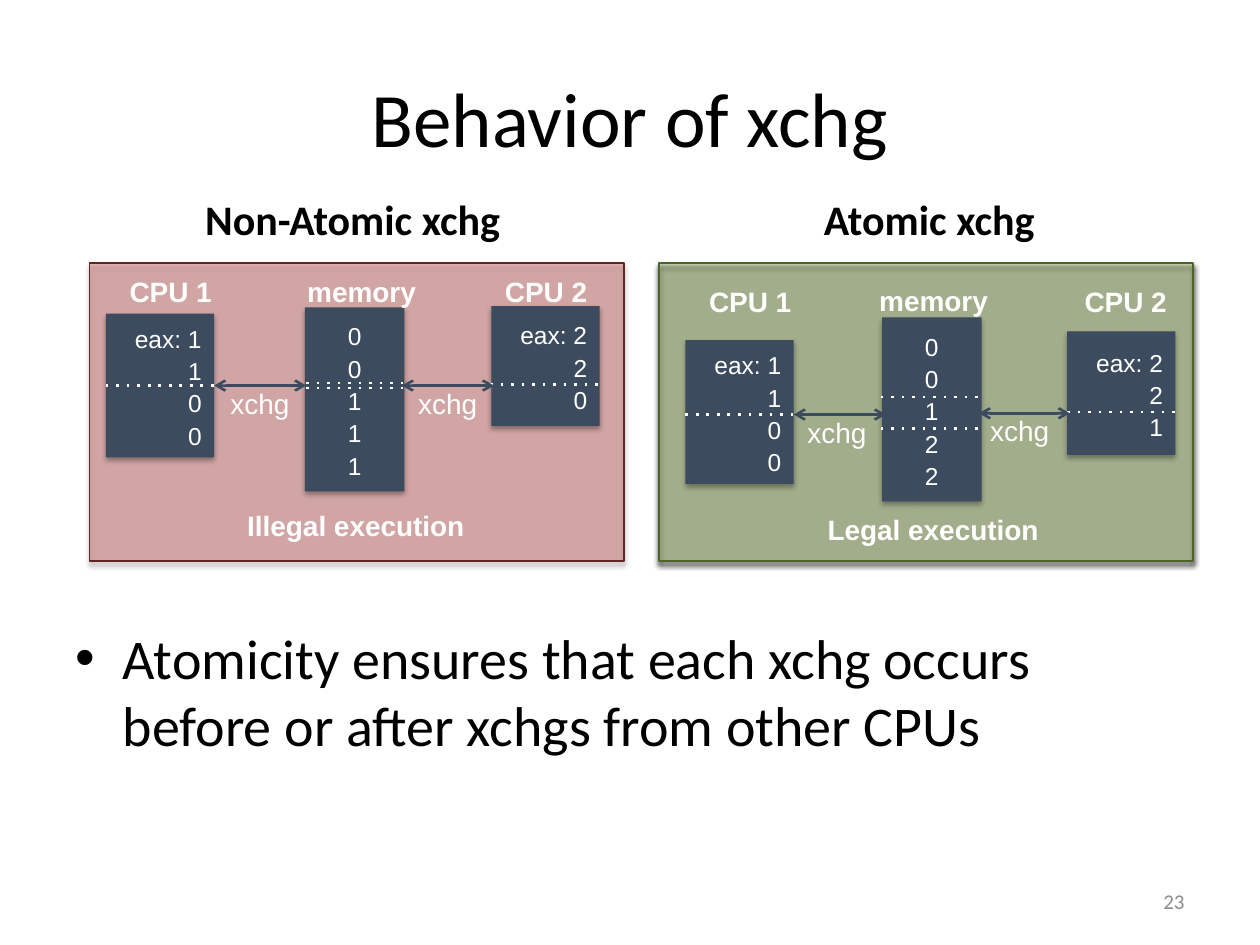
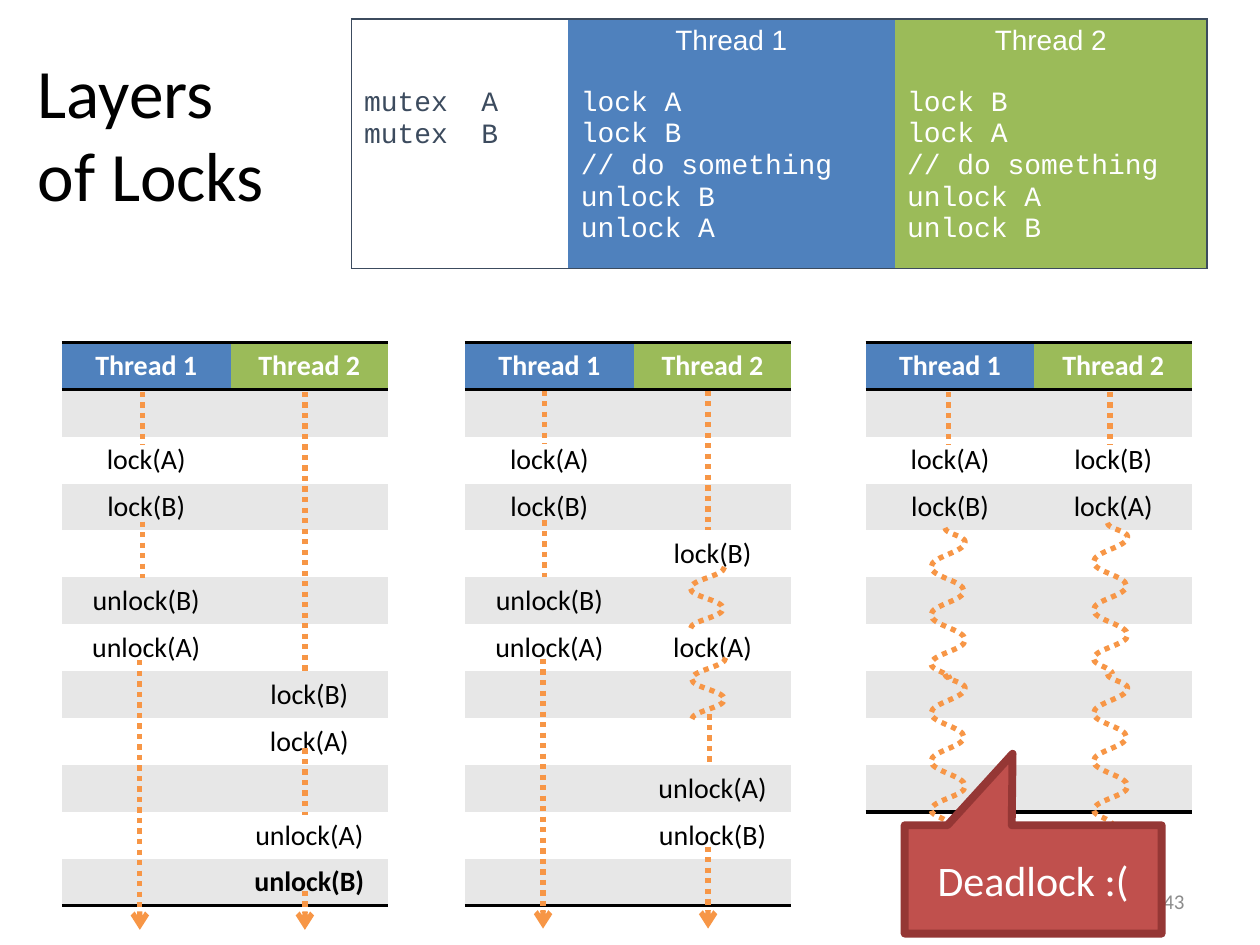
from copy import deepcopy
from dataclasses import dataclass
from typing import Any, NamedTuple

from lxml import etree
from pptx import Presentation
from pptx.dml.color import RGBColor
from pptx.enum.shapes import MSO_CONNECTOR, MSO_SHAPE
from pptx.enum.text import MSO_ANCHOR, MSO_AUTO_SIZE, PP_ALIGN
from pptx.oxml.ns import qn
from pptx.util import Inches, Pt

LEFT, CENTER, RIGHT = PP_ALIGN.LEFT, PP_ALIGN.CENTER, PP_ALIGN.RIGHT
MIDDLE, TOP = MSO_ANCHOR.MIDDLE, MSO_ANCHOR.TOP
NO_STYLE_NO_GRID = "{2D5ABB26-0587-4C30-8999-92F81FD0307C}"


@dataclass(frozen=True)
class Theme:
    black: str = "000000"
    white: str = "FFFFFF"
    slate: str = "3C4B5E"
    band: str = "E7E7E7"
    number: str = "8C8C8C"
    red: str = "C0504D"
    red_edge: str = "953735"
    maroon: str = "632523"
    green: str = "9BBB59"
    green_edge: str = "4F6228"
    blue: str = "4F81BD"
    orange: str = "F79646"
    text_font: str = "Calibri"
    diagram_font: str = "Arial"
    code_font: str = "Courier New"
    title: float = 44
    side_title: float = 39.6
    body: float = 32
    heading: float = 24
    label: float = 16
    value: float = 14
    footer: float = 12


THEME = Theme()


class Label(NamedTuple):
    text: str
    left: float
    top: float
    width: float
    bold: bool = True
    wrap: bool = False
    align: Any = LEFT


class Store(NamedTuple):
    """A CPU register box or the memory box, one value a line."""
    values: str
    left: float
    top: float
    width: float
    height: float
    align: Any = RIGHT


class Stroke(NamedTuple):
    x: float
    y: float
    end_x: float
    end_y: float
    arrow: bool = False


class Panel(NamedTuple):
    left: float
    fill: str
    opacity: int
    edge: str
    shadow: int
    heading: Label
    stores: list[Store]
    labels: list[Label]
    dots: list[Stroke]
    exchanges: list[Stroke]


class Schedule(NamedTuple):
    left: float
    rows: int
    steps: tuple[dict[int, str], dict[int, str]]  # row -> call, for each thread
    runs: list[tuple]    # x from the table's left, top, bottom, arrow
    waits: list[tuple]   # left, top, swing points


SHORT_WAIT = [(.27, 0), (0, .17), (.26, .33), (0, .49)]
LONG_WAIT = [(.11, 0), (.27, .11), (0, .31), (.26, .5), (0, .69), (.27, .89), (0, 1.08), (.15, 1.2)]

PANELS = [
    Panel(.71, THEME.red, 39, THEME.maroon, 35, Label("Non-Atomic xchg", 1.53, 1.49, 2.57),
          [Store("eax: 1\n1\n0\n0", .84, 2.49, .86, 1.14),
           Store("eax: 2\n2\n0", 3.9, 2.43, .86, .95),
           Store("0\n0\n1\n1\n1", 2.42, 2.44, .79, 1.46, CENTER)],
          [Label("xchg", 1.73, 3.02, .68, False), Label("xchg", 3.22, 3.02, .68, False),
           Label("Illegal execution", 1.01, 3.99, 3.63, wrap=True, align=CENTER),
           Label("CPU 1", .93, 2.13, .86), Label("CPU 2", 3.91, 2.13, .86),
           Label("memory", 2.34, 2.13, 1.07)],
          [Stroke(.84, 3.06, 1.73, 3.06), Stroke(3.89, 3.05, 4.78, 3.05),
           Stroke(2.43, 3.04, 3.23, 3.04), Stroke(2.43, 3.08, 3.23, 3.08)],
          [Stroke(3.19, 3.06, 3.92, 3.06, True), Stroke(1.7, 3.06, 2.43, 3.06, True)]),
    Panel(5.23, THEME.green, 35, THEME.green_edge, 100, Label("Atomic xchg", 6.44, 1.49, 1.89),
          [Store("eax: 1\n1\n0\n0", 5.44, 2.7, .86, 1.14),
           Store("eax: 2\n2\n1", 8.47, 2.63, .86, .98),
           Store("0\n0\n1\n2\n2", 7, 2.52, .79, 1.46, CENTER)],
          [Label("xchg", 6.31, 3.25, .68, False), Label("xchg", 7.76, 3.23, .68, False),
           Label("Legal execution", 6.47, 4.02, 1.9), Label("CPU 1", 5.53, 2.21, .86),
           Label("CPU 2", 8.51, 2.21, .86), Label("memory", 6.88, 2.2, 1.07)],
          [Stroke(5.44, 3.29, 6.33, 3.29), Stroke(8.47, 3.27, 9.35, 3.27),
           Stroke(6.99, 3.15, 7.79, 3.15), Stroke(6.99, 3.4, 7.78, 3.4)],
          [Stroke(7.77, 3.28, 8.49, 3.28, True), Stroke(6.3, 3.29, 7.03, 3.29, True)]),
]

THREAD_1_STEPS = {2: "lock(A)", 3: "lock(B)", 5: "unlock(B)", 6: "unlock(A)"}
SCHEDULES = [
    Schedule(.49, 12,
             (THREAD_1_STEPS, {7: "lock(B)", 8: "lock(A)", 10: "unlock(A)", 11: "unlock(B)"}),
             [(.62, 5.24, 7.38, True), (1.93, 7.07, 7.38, True), (1.93, 3.11, 5.33, False),
              (.64, 3.11, 3.53, False), (.64, 4.14, 4.59, False), (1.93, 5.94, 6.47, False)], []),
    Schedule(3.69, 12,
             (THREAD_1_STEPS, {4: "lock(B)", 6: "lock(A)", 9: "unlock(A)", 10: "unlock(B)"}),
             [(.62, 5.23, 7.37, True), (1.93, 6.72, 7.37, True), (1.93, 3.1, 4.21, False),
              (.63, 3.1, 3.52, False), (.63, 4.13, 4.58, False), (1.94, 5.67, 6.08, False)],
             [(5.48, 4.5, SHORT_WAIT), (5.49, 5.22, SHORT_WAIT)]),
    Schedule(6.87, 10,
             ({2: "lock(A)", 3: "lock(B)"}, {2: "lock(B)", 3: "lock(A)"}),
             [(.66, 3.11, 3.53, False), (1.94, 3.11, 3.53, False)],
             [(7.39, 4.19, LONG_WAIT), (7.39, 5.35, LONG_WAIT),
              (8.68, 4.15, LONG_WAIT), (8.68, 5.35, LONG_WAIT)]),
]


# Shared helpers
def inches(*lengths: float) -> list[int]:
    return [Inches(length) for length in lengths]


def rgb(color: str) -> RGBColor:
    return RGBColor.from_string(color)


def write(frame, text: str, *, size: float, font: str = THEME.text_font, color: str = THEME.black,
          bold: bool = False, align=LEFT, anchor=None, spacing: float | None = None,
          after: float | None = None, append: bool = False) -> None:
    """Write the text as one formatted paragraph with line breaks."""
    paragraph = frame.add_paragraph() if append else frame.paragraphs[0]
    paragraph.alignment = align
    if spacing:
        paragraph.line_spacing = spacing
    if after:
        paragraph.space_after = Pt(after)
    for index, line in enumerate(text.split("\n")):
        if index:
            paragraph.add_line_break()
            paragraph._p[-1].append(deepcopy(run.font._rPr))
        run = paragraph.add_run()
        run.text = line
        run.font.size, run.font.name, run.font.bold = Pt(size), font, bold
        run.font.color.rgb = rgb(color)
    if anchor is not None:
        frame.vertical_anchor = anchor


def add_label(shapes, label: Label, height: float = .37, **text_format) -> None:
    frame = shapes.add_textbox(*inches(label.left, label.top, label.width, height)).text_frame
    frame.word_wrap = label.wrap
    frame.auto_size = MSO_AUTO_SIZE.SHAPE_TO_FIT_TEXT
    write(frame, label.text, bold=label.bold, align=label.align, **text_format)


def fill_placeholder(placeholder, place: tuple, text: str, **text_format) -> None:
    placeholder.left, placeholder.top, placeholder.width, placeholder.height = inches(*place)
    placeholder.text_frame.auto_size = MSO_AUTO_SIZE.NONE
    write(placeholder.text_frame, text, **text_format)


def add_slide_number(slide, number: str) -> None:
    frame = slide.shapes.add_textbox(*inches(7.17, 6.95, 2.33, .4)).text_frame
    frame.word_wrap = True
    write(frame, number, size=THEME.footer, color=THEME.number, align=RIGHT, anchor=MIDDLE)


def add_block(shapes, kind, place: tuple, fill: str, *, opacity: int = 100, edge: str | None = None,
              edge_width: float = 1, shadow: int = 0):
    block = shapes.add_shape(kind, *inches(*place))
    block.fill.solid()
    block.fill.fore_color.rgb = rgb(fill)
    if opacity < 100:
        tint = block._element.spPr.find(qn("a:solidFill"))[0]
        etree.SubElement(tint, qn("a:alpha"), val=str(opacity * 1000))
    if edge:
        block.line.color.rgb = rgb(edge)
        block.line.width = Pt(edge_width)
    else:
        block.line.fill.background()
    block.shadow.inherit = False
    if shadow:
        effects = block._element.spPr.find(qn("a:effectLst"))
        outer = etree.SubElement(effects, qn("a:outerShdw"), blurRad=str(Pt(3.1)), dist=str(Pt(1.8)),
                                 dir="5400000", rotWithShape="0")
        tone = etree.SubElement(outer, qn("a:srgbClr"), val=THEME.black)
        etree.SubElement(tone, qn("a:alpha"), val=str(shadow * 1000))
    return block


def style_line(line, color: str, width: float, dash: str = "solid", ends: tuple = ()) -> None:
    line.color.rgb = rgb(color)
    line.width = Pt(width)
    ln = line._get_or_add_ln()
    etree.SubElement(ln, qn("a:prstDash"), val=dash)
    for end in ends:
        etree.SubElement(ln, qn(f"a:{end}"), type="arrow")


def add_stroke(shapes, stroke: Stroke, color: str, width: float, dash: str = "solid",
               ends: tuple = ()) -> None:
    connector = shapes.add_connector(MSO_CONNECTOR.STRAIGHT, *inches(*stroke[:4]))
    style_line(connector.line, color, width, dash, ends if stroke.arrow else ())
    etree.SubElement(connector._element.spPr, qn("a:effectLst"))


def add_plain_table(slide, rows: int, place: tuple, widths: tuple):
    table = slide.shapes.add_table(rows, len(widths), *inches(*place)).table
    table._tbl.tblPr.find(qn("a:tableStyleId")).text = NO_STYLE_NO_GRID
    table.first_row = table.horz_banding = False
    for column, width in zip(table.columns, widths):
        column.width = Inches(width)
    return table


def style_cell(cell, fill: str, edge: str, edge_width: float, sides: str) -> None:
    """Fill the cell and draw the named sides, given in the order L, R, T, B."""
    cell.fill.solid()
    cell.fill.fore_color.rgb = rgb(fill)
    properties = cell._tc.get_or_add_tcPr()
    for index, side in enumerate(sides):
        ln = etree.Element(qn(f"a:ln{side}"), w=str(Pt(edge_width)))
        etree.SubElement(etree.SubElement(ln, qn("a:solidFill")), qn("a:srgbClr"), val=edge)
        properties.insert(index, ln)


# Slide parts
def add_panel(slide, panel: Panel) -> None:
    add_label(slide.shapes, panel.heading, .5, size=THEME.heading)
    shapes = slide.shapes.add_group_shape().shapes
    frame = add_block(shapes, MSO_SHAPE.ROUNDED_RECTANGLE, (panel.left, 2.09, 4.24, 2.36), panel.fill,
                      opacity=panel.opacity, edge=panel.edge, shadow=panel.shadow)
    frame.adjustments[0] = 0
    for store in panel.stores:
        block = add_block(shapes, MSO_SHAPE.RECTANGLE, store[1:5], THEME.slate, shadow=35)
        write(block.text_frame, store.values, size=THEME.value, font=THEME.diagram_font,
              color=THEME.white, align=store.align, anchor=MIDDLE, spacing=1.1)
    for label in panel.labels:
        add_label(shapes, label, size=THEME.label, font=THEME.diagram_font, color=THEME.white)
    for dots in panel.dots:
        add_stroke(shapes, dots, THEME.white, 1.5, "dot")
    for exchange in panel.exchanges:
        add_stroke(shapes, exchange, THEME.slate, 1.5, ends=("headEnd", "tailEnd"))


def add_code_table(slide) -> None:
    table = add_plain_table(slide, 1, (2.79, .15, 6.79, 1.98), (1.72, 2.59, 2.48))
    mutexes, *threads = table.rows[0].cells
    style_cell(mutexes, THEME.white, THEME.slate, 1, "LTB")
    mutexes.margin_top = Inches(.55)
    code = {"size": THEME.label, "font": THEME.code_font}
    write(mutexes.text_frame, "mutex  A\nmutex  B", color=THEME.slate, **code)
    listings = [("Thread 1", "lock A\nlock B\n// do something\nunlock B\nunlock A", THEME.blue, "TB"),
                ("Thread 2", "lock B\nlock A\n// do something\nunlock A\nunlock B", THEME.green, "RTB")]
    for cell, (name, listing, fill, sides) in zip(threads, listings):
        style_cell(cell, fill, THEME.slate, 1, sides)
        write(cell.text_frame, name, size=THEME.label, font=THEME.diagram_font, color=THEME.white,
              align=CENTER, after=18)
        write(cell.text_frame, listing, color=THEME.white, append=True, **code)


def add_wait(slide, left: float, top: float, swings: list[tuple]) -> None:
    """Draw a wave whose curves leave and meet every swing point vertically."""
    start, *others = [inches(left + x, top + y) for x, y in swings]
    builder = slide.shapes.build_freeform(*start)
    builder.add_line_segments(others, close=False)
    wave = builder.convert_to_shape()
    x, y = start[0] - wave.left, start[1] - wave.top
    for segment in list(wave._element.iter(qn("a:lnTo"))):
        next_x, next_y = int(segment[0].get("x")), int(segment[0].get("y"))
        bend = round((next_y - y) * .42)
        curve = etree.Element(qn("a:cubicBezTo"))
        for point_x, point_y in ((x, y + bend), (next_x, next_y - bend), (next_x, next_y)):
            etree.SubElement(curve, qn("a:pt"), x=str(point_x), y=str(point_y))
        segment.getparent().replace(segment, curve)
        x, y = next_x, next_y
    wave.fill.background()
    style_line(wave.line, THEME.orange, 3, "sysDot")
    wave.shadow.inherit = False


def add_schedule(slide, schedule: Schedule) -> None:
    row_height = 4.47 / 12
    table = add_plain_table(slide, schedule.rows, (schedule.left, 2.72, 2.59, row_height * schedule.rows),
                            (1.34, 1.25))
    last = schedule.rows - 1
    for row in range(schedule.rows):
        table.rows[row].height = Inches(row_height)
        for thread, header_fill in enumerate((THEME.blue, THEME.green)):
            cell = table.cell(row, thread)
            cell.margin_top = cell.margin_bottom = Inches(.02)
            cell.vertical_anchor = MIDDLE
            fill = (THEME.band if row % 2 else THEME.white) if row else header_fill
            sides = "TB" if row == 0 else "B" if row == last else ""
            style_cell(cell, fill, THEME.black, 2, sides)
            text = schedule.steps[thread].get(row) if row else f"Thread {thread + 1}"
            if text:
                write(cell.text_frame, text, size=THEME.label, align=CENTER, bold=row in (0, last),
                      color=THEME.black if row else THEME.white)
    for x, top, bottom, arrow in schedule.runs:
        x += schedule.left
        add_stroke(slide.shapes, Stroke(x, top, x, bottom, arrow), THEME.orange, 3, "sysDot", ("tailEnd",))
    for wait in schedule.waits:
        add_wait(slide, *wait)


# Slides
def build_xchg_slide(deck) -> None:
    slide = deck.slides.add_slide(deck.slide_layouts[1])
    title, body = slide.placeholders
    fill_placeholder(title, (.5, .3, 9, 1.25), "Behavior of xchg", size=THEME.title, align=CENTER, anchor=MIDDLE)
    fill_placeholder(body, (.5, 4.9, 9, 1.8),
                     "Atomicity ensures that each xchg occurs before or after xchgs from other CPUs",
                     size=THEME.body, anchor=TOP)
    add_slide_number(slide, "23")
    for panel in PANELS:
        add_panel(slide, panel)


def build_locks_slide(deck) -> None:
    slide = deck.slides.add_slide(deck.slide_layouts[5])
    fill_placeholder(slide.shapes.title, (.2, .31, 9, 1.48), "Layers\nof Locks", size=THEME.side_title,
                     anchor=MIDDLE)
    add_slide_number(slide, "43")
    add_code_table(slide)
    for schedule in SCHEDULES:
        add_schedule(slide, schedule)
    deadlock = add_block(slide.shapes, MSO_SHAPE.RECTANGULAR_CALLOUT, (7.18, 6.55, 2.04, .86), THEME.red,
                         edge=THEME.red_edge, edge_width=4.5)
    deadlock.adjustments[0], deadlock.adjustments[1] = -.08, -1.16
    write(deadlock.text_frame, "Deadlock :(", size=THEME.heading, color=THEME.white, align=CENTER, anchor=MIDDLE)


def main() -> None:
    deck = Presentation()
    deck.slide_width, deck.slide_height = inches(10, 7.5)
    build_xchg_slide(deck)
    build_locks_slide(deck)
    deck.save("out.pptx")


if __name__ == "__main__":
    main()
